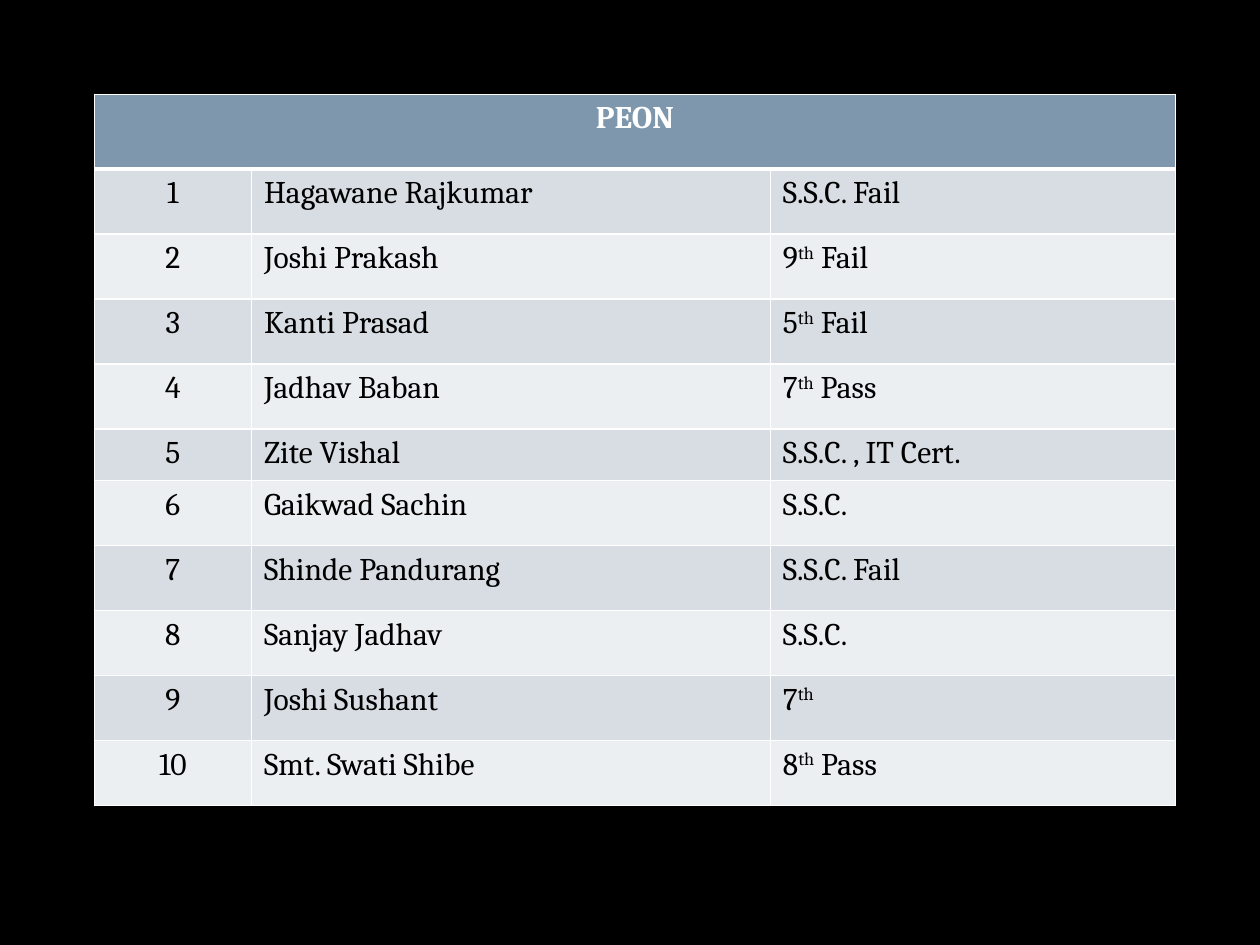
from dataclasses import dataclass

from lxml import etree
from pptx import Presentation
from pptx.dml.color import RGBColor
from pptx.enum import text
from pptx.oxml import ns
from pptx.table import Table, _Cell
from pptx import util as u


@dataclass(frozen=True)
class Theme:
    background: str = "000000"
    header: str = "7E97AD"
    bands: tuple[str, str] = ("D8DDE3", "ECEFF1")
    ink: str = "000000"
    light: str = "FFFFFF"
    font: str = "Cambria"
    size: int = 18
    thin: int = 1
    thick: int = 3


@dataclass(frozen=True)
class Peon:
    name: str
    education: str
    height: float = 1.31


THEME = Theme()
HEADER_HEIGHT = 1.51
COLUMN_WIDTHS = (3.17, 10.46, 8.17)
ORDINAL = "th"
PEONS = (
    Peon("Hagawane Rajkumar", "S.S.C. Fail"),
    Peon("Joshi Prakash", "9th Fail"),
    Peon("Kanti Prasad", "5th Fail"),
    Peon("Jadhav Baban", "7th Pass"),
    Peon("Zite Vishal", "S.S.C. , IT Cert.", 1.04),
    Peon("Gaikwad Sachin", "S.S.C."),
    Peon("Shinde Pandurang", "S.S.C. Fail"),
    Peon("Sanjay Jadhav", "S.S.C."),
    Peon("Joshi Sushant", "7th"),
    Peon("Smt. Swati Shibe", "8th Pass"),
)


def draw_borders(cell: _Cell, top: int, bottom: int) -> None:
    widths = {"lnL": THEME.thin, "lnR": THEME.thin, "lnT": top, "lnB": bottom}
    properties = cell._tc.get_or_add_tcPr()
    for index, (side, width) in enumerate(widths.items()):
        line = etree.Element(ns.qn(f"a:{side}"), w=str(u.Pt(width)))
        fill = etree.SubElement(line, ns.qn("a:solidFill"))
        etree.SubElement(fill, ns.qn("a:srgbClr"), val=THEME.light)
        properties.insert(index, line)


def paint_cell(cell: _Cell, fill: str, top: int, bottom: int) -> None:
    cell.fill.solid()
    cell.fill.fore_color.rgb = RGBColor.from_string(fill)
    draw_borders(cell, top, bottom)


def write_cell(cell: _Cell, words: str, color: str, centred: bool = False, bold: bool = False) -> None:
    para = cell.text_frame.paragraphs[0]
    para.alignment = text.PP_ALIGN.CENTER if centred else text.PP_ALIGN.LEFT
    for part in filter(None, words.partition(ORDINAL)):
        span = para.add_run()
        span.text = part
        span.font.name = THEME.font
        span.font.size = u.Pt(THEME.size)
        span.font.bold = bold
        span.font.color.rgb = RGBColor.from_string(color)
        if part == ORDINAL:
            span._r.get_or_add_rPr().set("baseline", "30000")


def fill_header(table: Table) -> None:
    table.rows[0].height = u.Cm(HEADER_HEIGHT)
    for cell in table.rows[0].cells:
        paint_cell(cell, THEME.header, THEME.thin, THEME.thick)
    title = table.cell(0, 0)
    title.merge(table.cell(0, len(COLUMN_WIDTHS) - 1))
    write_cell(title, "PEON", THEME.light, centred=True, bold=True)


def fill_row(table: Table, number: int, peon: Peon) -> None:
    row = table.rows[number]
    row.height = u.Cm(peon.height)
    top = THEME.thick if number == 1 else THEME.thin
    for column, words in enumerate((str(number), peon.name, peon.education)):
        cell = row.cells[column]
        paint_cell(cell, THEME.bands[(number - 1) % 2], top, THEME.thin)
        write_cell(cell, words, THEME.ink, centred=column == 0)


def main() -> None:
    """Build the slide that lists the peons and their education."""
    deck = Presentation()
    deck.slide_width, deck.slide_height = u.Cm(25.4), u.Cm(19.05)
    page = deck.slides.add_slide(deck.slide_layouts[6])
    page.background.fill.solid()
    page.background.fill.fore_color.rgb = RGBColor.from_string(THEME.background)

    height = HEADER_HEIGHT + sum(peon.height for peon in PEONS)
    frame = page.shapes.add_table(
        len(PEONS) + 1, len(COLUMN_WIDTHS),
        u.Cm(1.9), u.Cm(1.9), u.Cm(sum(COLUMN_WIDTHS)), u.Cm(height),
    )
    table = frame.table
    for column, width in zip(table.columns, COLUMN_WIDTHS):
        column.width = u.Cm(width)
    fill_header(table)
    for number, peon in enumerate(PEONS, start=1):
        fill_row(table, number, peon)
    deck.save("out.pptx")


if __name__ == "__main__":
    main()
